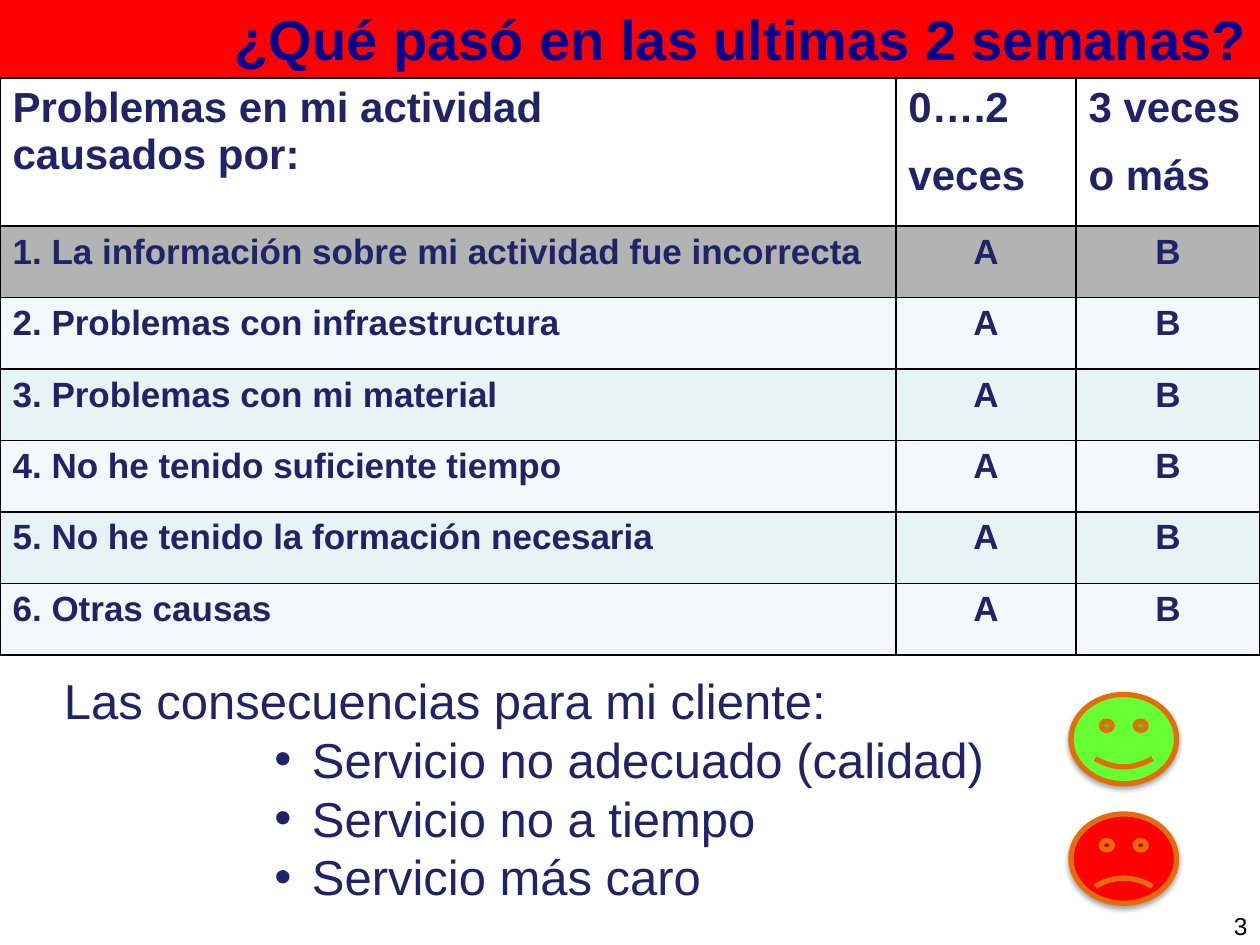
from lxml.etree import SubElement
from pptx import Presentation
from pptx.dml.color import RGBColor
from pptx.enum.shapes import MSO_SHAPE
from pptx.enum.text import MSO_ANCHOR, PP_ALIGN
from pptx.oxml import parse_xml
from pptx.oxml.ns import nsdecls, qn
from pptx.util import Cm, Pt

NAVY = "222268"
BLACK = "000000"
RED = "FF0000"
HEADER = [["Problemas en mi actividad \vcausados por:"], ["0….2", "veces"], ["3 veces", "o más"]]
CAUSES = [
    ("1. La información sobre mi actividad fue incorrecta", "B3B3B3"),
    ("2. Problemas con infraestructura", "F3F9FA"),
    ("3. Problemas con mi material", "E7F3F4"),
    ("4. No he tenido suficiente tiempo", "F3F9FA"),
    ("5. No he tenido la formación necesaria", "E7F3F4"),
    ("6. Otras causas", "F3F9FA"),
]
CONSEQUENCES = ["Servicio no adecuado (calidad)", "Servicio no a tiempo", "Servicio más caro"]


def paint(fill, color):
    fill.solid()
    fill.fore_color.rgb = RGBColor.from_string(color)


def add_span(para, text, size, color=NAVY, bold=False):
    span = para.add_run()
    span.text = text
    span.font.name = "Arial"
    span.font.size = Pt(size)
    span.font.bold = bold
    span.font.color.rgb = RGBColor.from_string(color)


def next_para(frame, index):
    return frame.paragraphs[0] if index == 0 else frame.add_paragraph()


def add_banner(page, text):
    banner = page.shapes.add_shape(MSO_SHAPE.RECTANGLE, 0, 0, Cm(25.4), Cm(1.55))
    banner.shadow.inherit = False
    paint(banner.fill, RED)
    banner.line.fill.background()
    banner.text_frame.vertical_anchor = MSO_ANCHOR.MIDDLE
    para = banner.text_frame.paragraphs[0]
    para.alignment = PP_ALIGN.RIGHT
    add_span(para, text, 32, "000090", True)


def add_borders(cell):
    properties = cell._tc.get_or_add_tcPr()
    for position, side in enumerate(("lnL", "lnR", "lnT", "lnB")):
        properties.insert(position, parse_xml(
            f'<a:{side} {nsdecls("a")} w="{Pt(1)}"><a:solidFill>'
            f'<a:srgbClr val="{BLACK}"/></a:solidFill></a:{side}>'))


def fill_cell(cell, lines, size, color, alignment):
    paint(cell.fill, color)
    add_borders(cell)
    for index, line in enumerate(lines):
        para = next_para(cell.text_frame, index)
        para.alignment = alignment
        para.space_before = para.space_after = Pt(6)
        for part_index, part in enumerate(line.split("\v")):
            if part_index:
                para.add_line_break()
            add_span(para, part, size, bold=True)


def add_cause_table(page):
    widths = [18.06, 3.63, 3.71]
    heights = [2.99] + [1.44] * len(CAUSES)
    table = page.shapes.add_table(len(heights), len(widths), 0, Cm(1.57),
                                  Cm(sum(widths)), Cm(sum(heights))).table
    for column, width in zip(table.columns, widths):
        column.width = Cm(width)
    for row, height in zip(table.rows, heights):
        row.height = Cm(height)
    for column, lines in enumerate(HEADER):
        fill_cell(table.cell(0, column), lines, 24, "FFFFFF", PP_ALIGN.LEFT)
    for row, (cause, color) in enumerate(CAUSES, start=1):
        for column, text in enumerate((cause, "A", "B")):
            alignment = PP_ALIGN.CENTER if column else PP_ALIGN.LEFT
            fill_cell(table.cell(row, column), [text], 20, color, alignment)


def add_text_box(page, left, top, width, height):
    box = page.shapes.add_textbox(Cm(left), Cm(top), Cm(width), Cm(height))
    box.text_frame.word_wrap = True
    return box.text_frame


def add_bullet(para):
    para.level = 1
    properties = para._p.get_or_add_pPr()
    properties.set("marL", str(Cm(5)))
    properties.set("indent", str(Cm(-0.76)))
    SubElement(properties, qn("a:buFont")).set("typeface", "Arial")
    SubElement(properties, qn("a:buChar")).set("char", "•")


def add_consequences(page):
    frame = add_text_box(page, 1.04, 13.39, 24.36, 5.03)
    for index, text in enumerate(["Las consecuencias para mi cliente:"] + CONSEQUENCES):
        para = next_para(frame, index)
        if index:
            add_bullet(para)
        add_span(para, text, 28)


def add_page_number(page, number):
    frame = add_text_box(page, 17.35, 18.16, 8.05, 1.02)
    frame.vertical_anchor = MSO_ANCHOR.MIDDLE
    para = frame.paragraphs[0]
    para.alignment = PP_ALIGN.RIGHT
    add_span(para, number, 14, BLACK)


def add_face(page, top, color, smile):
    """Add a face whose mouth bends up for a positive smile, down for a negative one."""
    face = page.shapes.add_shape(MSO_SHAPE.SMILEY_FACE, Cm(21.59), Cm(top), Cm(2.13), Cm(1.8))
    face.adjustments[0] = smile
    paint(face.fill, color)
    paint(face.line.fill, "E46C0A")
    face.line.width = Pt(3)
    face._element.spPr.append(parse_xml(
        f'<a:effectLst {nsdecls("a")}><a:outerShdw blurRad="{Pt(3.1)}" dist="{Pt(1.8)}" '
        f'dir="5400000" rotWithShape="0"><a:srgbClr val="{BLACK}"><a:alpha val="35000"/>'
        '</a:srgbClr></a:outerShdw></a:effectLst>'))


def main():
    deck = Presentation()
    deck.slide_width, deck.slide_height = Cm(25.4), Cm(19.05)
    page = deck.slides.add_slide(deck.slide_layouts[6])
    add_banner(page, "¿Qué pasó en las ultimas 2 semanas?")
    add_cause_table(page)
    add_consequences(page)
    add_page_number(page, "3")
    add_face(page, 16.41, RED, -0.05)
    add_face(page, 14, "66FF33", 0.05)
    deck.save("out.pptx")


if __name__ == "__main__":
    main()
